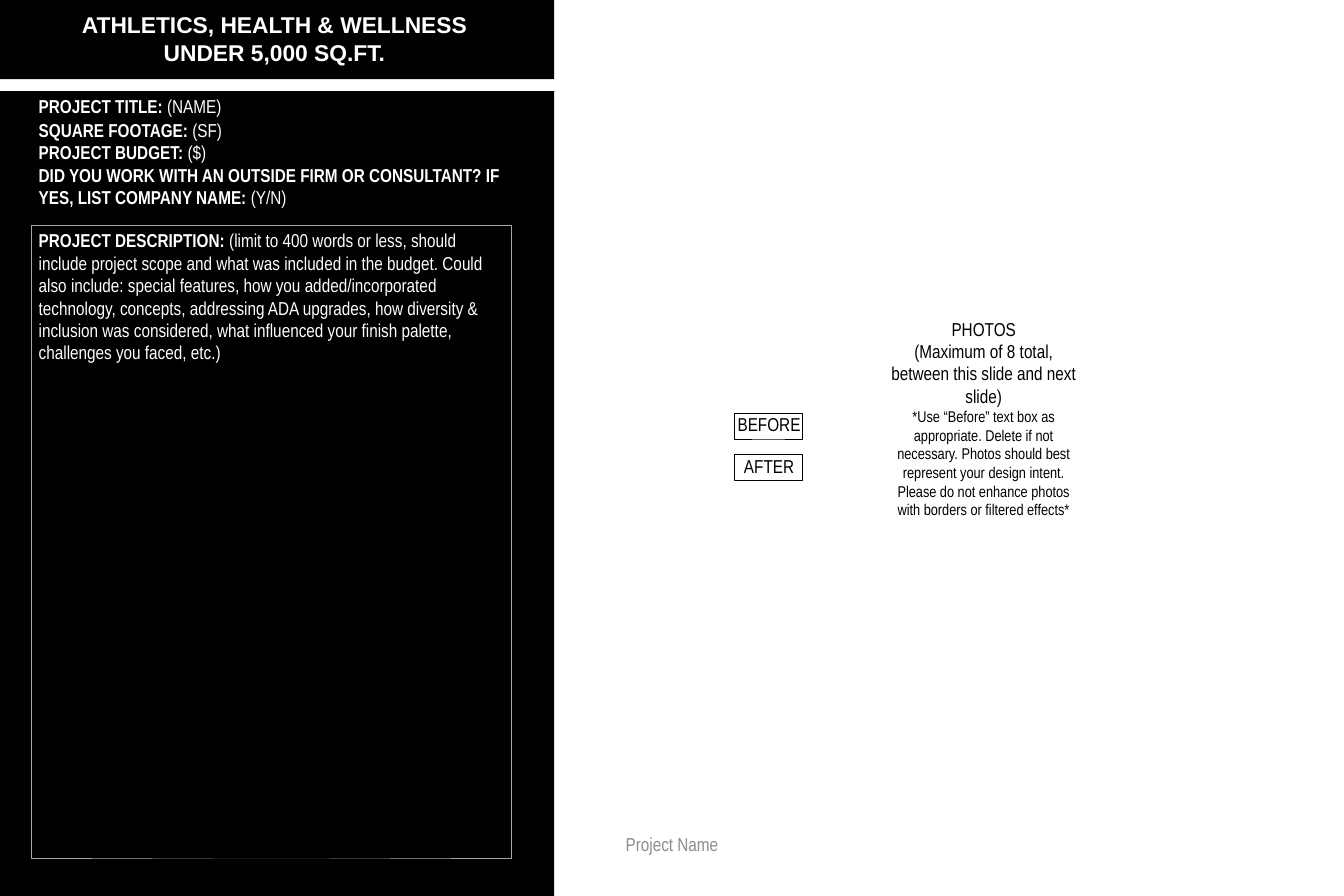
from dataclasses import dataclass

from pptx import Presentation
from pptx.dml.color import RGBColor
from pptx.enum.shapes import MSO_SHAPE
from pptx.enum.text import MSO_ANCHOR, PP_ALIGN
from pptx.util import Inches, Pt

BLACK = RGBColor(0x00, 0x00, 0x00)
WHITE = RGBColor(0xFF, 0xFF, 0xFF)
FRAME_GRAY = RGBColor(0xA6, 0xA6, 0xA6)
FOOTER_GRAY = RGBColor(0x8C, 0x8C, 0x8C)

BODY_FONT = "Arial Narrow"
TITLE_FONT = "Arial"

PANEL_WIDTH = 7.42
FIELD_LEFT = 0.42
FIELD_WIDTH = 6.42
DEFAULT_INSETS = (0.1, 0.05, 0.1, 0.05)
NO_INSETS = (0, 0, 0, 0)
LABEL_INSETS = (0.02, 0, 0, 0)


@dataclass(frozen=True)
class Span:
    text: str
    bold: bool = False
    size: float = 18


@dataclass(frozen=True)
class TextBlock:
    """Text with its place; insets run left, top, right, bottom."""
    left: float
    top: float
    width: float
    height: float
    paragraphs: list[list[Span]]
    color: RGBColor = WHITE
    font: str = BODY_FONT
    align: PP_ALIGN = PP_ALIGN.LEFT
    insets: tuple[float, float, float, float] = DEFAULT_INSETS
    border: RGBColor | None = None
    border_width: float = 0.75


def field(label: str, hint: str) -> list[Span]:
    """Return a bold label followed by a plain hint."""
    return [Span(f"{label}: ", bold=True), Span(hint)]


def photo_label(text: str, top: float) -> TextBlock:
    return TextBlock(9.83, top, 0.92, 0.35, [[Span(text)]], BLACK,
                     align=PP_ALIGN.CENTER, insets=LABEL_INSETS, border=BLACK)


PANELS = [(0, 1.06), (1.22, 10.78)]  # top, height

TEXT_BLOCKS = [
    TextBlock(6.12, 11.16, 5.76, 0.6, [[Span("Project Name")]], FOOTER_GRAY,
              align=PP_ALIGN.CENTER, insets=NO_INSETS),
    photo_label("BEFORE", 5.53),
    TextBlock(
        11.83, 4.25, 2.67, 2.92,
        [
            [Span("PHOTOS")],
            [Span("(Maximum of 8 total, between this slide and next slide)")],
            [Span("*Use “Before” text box as appropriate. Delete if not "
                  "necessary. Photos should best represent your design "
                  "intent. Please do not enhance photos with borders or "
                  "filtered effects*", size=15)],
        ],
        BLACK, align=PP_ALIGN.CENTER, insets=LABEL_INSETS),
    TextBlock(
        0.25, 0.1, 6.85, 0.84,
        [
            [Span("ATHLETICS, HEALTH & WELLNESS", bold=True, size=22)],
            [Span("UNDER 5,000 SQ.FT.", bold=True, size=22)],
        ],
        font=TITLE_FONT, align=PP_ALIGN.CENTER),
    TextBlock(FIELD_LEFT, 1.22, FIELD_WIDTH, 0.71,
              [field("PROJECT TITLE", "(NAME)")]),
    TextBlock(
        FIELD_LEFT, 1.54, FIELD_WIDTH, 1.31,
        [
            field("SQUARE FOOTAGE", "(SF)"),
            field("PROJECT BUDGET", "($)"),
            field("DID YOU WORK WITH AN OUTSIDE FIRM OR CONSULTANT? "
                  "IF YES, LIST COMPANY NAME", "(Y/N)"),
        ]),
    TextBlock(
        FIELD_LEFT, 3.02, FIELD_WIDTH, 8.47,
        [field("PROJECT DESCRIPTION",
               "(limit to 400 words or less, should include project scope "
               "and what was included in the budget. Could also include: "
               "special features, how you added/incorporated technology, "
               "concepts, addressing ADA upgrades, how diversity & inclusion "
               "was considered, what influenced your finish palette, "
               "challenges you faced, etc.)")],
        border=FRAME_GRAY, border_width=0.25),
    photo_label("AFTER", 6.09),
]


def draw_panel(page, top: float, height: float) -> None:
    panel = page.shapes.add_shape(MSO_SHAPE.RECTANGLE, 0, Inches(top),
                                  Inches(PANEL_WIDTH), Inches(height))
    panel.shadow.inherit = False
    panel.fill.solid()
    panel.fill.fore_color.rgb = BLACK
    panel.line.fill.background()


def draw_text_block(page, block: TextBlock) -> None:
    place = [Inches(value) for value in
             (block.left, block.top, block.width, block.height)]
    if block.border is None:
        box = page.shapes.add_textbox(*place)
    else:
        box = page.shapes.add_shape(MSO_SHAPE.RECTANGLE, *place)
        box.shadow.inherit = False
        box.fill.background()
        box.line.color.rgb = block.border
        box.line.width = Pt(block.border_width)

    frame = box.text_frame
    frame.word_wrap = True
    frame.vertical_anchor = MSO_ANCHOR.TOP
    (frame.margin_left, frame.margin_top,
     frame.margin_right, frame.margin_bottom) = map(Inches, block.insets)

    for index, spans in enumerate(block.paragraphs):
        para = frame.add_paragraph() if index else frame.paragraphs[0]
        para.alignment = block.align
        for span in spans:
            run = para.add_run()
            run.text = span.text
            run.font.name = block.font
            run.font.size = Pt(span.size)
            run.font.bold = span.bold
            run.font.color.rgb = block.color


def main() -> None:
    deck = Presentation()
    deck.slide_width = Inches(18)
    deck.slide_height = Inches(12)
    page = deck.slides.add_slide(deck.slide_layouts[6])
    for top, height in PANELS:
        draw_panel(page, top, height)
    for block in TEXT_BLOCKS:
        draw_text_block(page, block)
    deck.save("out.pptx")


if __name__ == "__main__":
    main()
